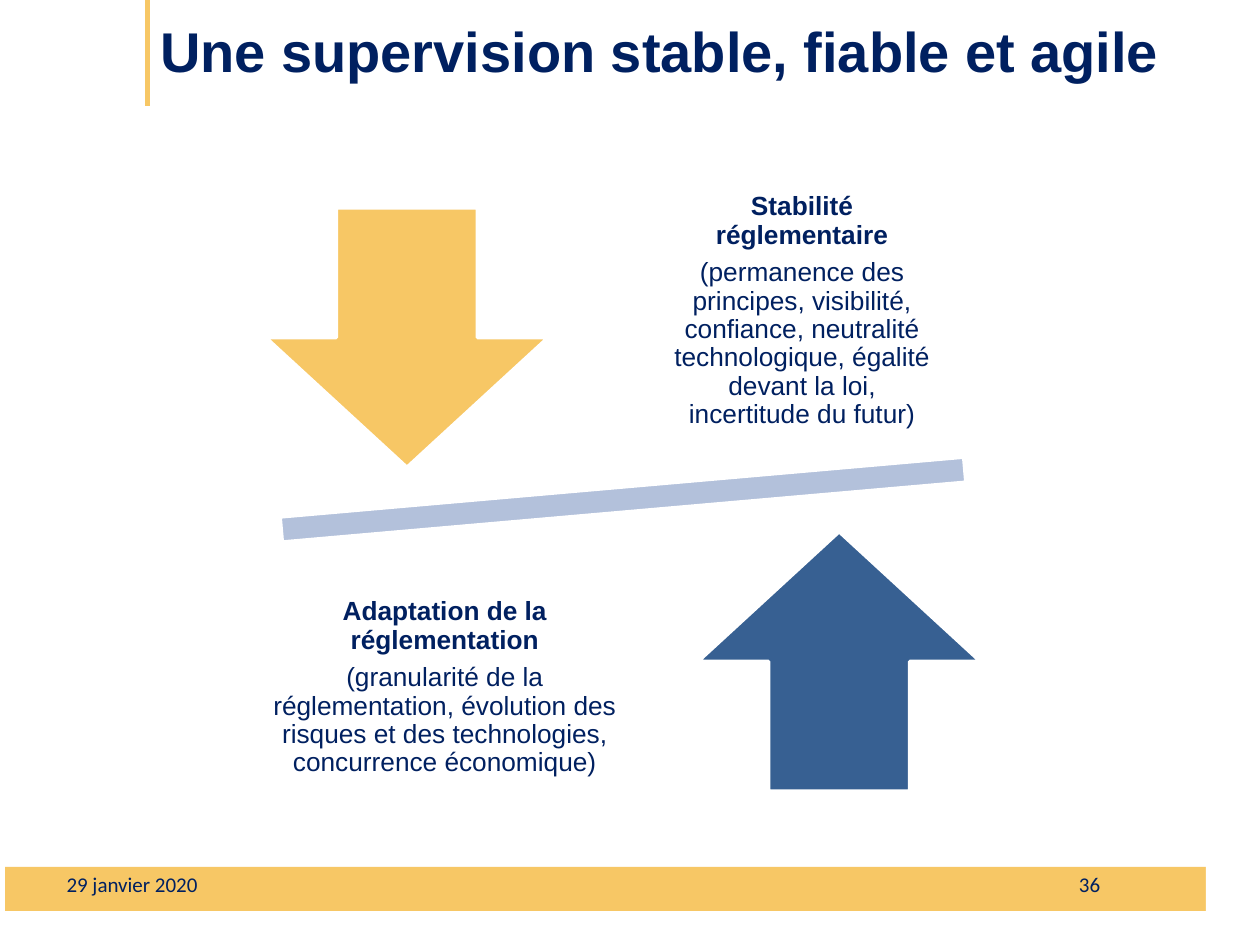
import pptx
import pptx.util
import pptx.dml.color
import pptx.enum.shapes
import pptx.enum.text
import pptx.oxml
from dataclasses import dataclass

Inches = pptx.util.Inches
Pt = pptx.util.Pt
Shapes = pptx.enum.shapes.MSO_SHAPE
Align = pptx.enum.text.PP_ALIGN
Anchor = pptx.enum.text.MSO_ANCHOR


def rgb(value):
    return pptx.dml.color.RGBColor.from_string(value)


@dataclass(frozen=True)
class Theme:
    navy: str = "002060"
    yellow: str = "F7C765"
    blue: str = "376092"
    pale_blue: str = "B3C1DB"
    white: str = "FFFFFF"
    title_size: float = 32
    body_size: float = 15
    footer_size: float = 12
    main_font: str = "Arial"
    footer_font: str = "Calibri"


class SlideBuilder:
    def __init__(self, slide, theme):
        self.slide = slide
        self.theme = theme

    def format_text(self, paragraph, font, **layout):
        for name, value in layout.items():
            setattr(paragraph, name, value)
        for name, value in font.items():
            setattr(paragraph.font, name, value)
        paragraph.font.color.rgb = rgb(self.theme.navy)

    def format_frame(self, frame, inset=None):
        frame.word_wrap = True
        frame.vertical_anchor = Anchor.MIDDLE
        if inset is not None:
            for side in ("left", "right", "top", "bottom"):
                setattr(frame, f"margin_{side}", Inches(inset))

    def title(self, text, left, top, width, height):
        shape = self.slide.shapes.title
        position = {"left": left, "top": top, "width": width, "height": height}
        for name, value in position.items():
            setattr(shape, name, Inches(value))
        self.format_frame(shape.text_frame)
        shape.text_frame.text = text
        font = {"name": self.theme.main_font, "size": Pt(self.theme.title_size), "bold": True}
        self.format_text(shape.text_frame.paragraphs[0], font, alignment=Align.LEFT)

    def shape(self, kind, fill, left, top, width, height, outline=None, rotation=0):
        shape = self.slide.shapes.add_shape(kind, *map(Inches, (left, top, width, height)))
        shape.shadow.inherit = False
        shape.rotation = rotation
        shape.fill.solid()
        shape.fill.fore_color.rgb = rgb(fill)
        if outline:
            shape.line.color.rgb = rgb(outline)
            shape.line.width = Pt(2)
        else:
            shape.line.fill.background()

    def line(self, color, weight, *ends):
        connector = self.slide.shapes.add_connector(
            pptx.enum.shapes.MSO_CONNECTOR.STRAIGHT, *map(Inches, ends))
        connector.line.color.rgb = rgb(color)
        connector.line.width = Pt(weight)
        properties = connector._element.spPr
        properties.append(pptx.oxml.parse_xml(
            '<a:effectLst xmlns:a="http://schemas.openxmlformats.org/drawingml/2006/main"/>'))

    def text_box(self, left, top, width, height, inset=None):
        box = self.slide.shapes.add_textbox(*map(Inches, (left, top, width, height)))
        self.format_frame(box.text_frame, inset)
        return box.text_frame

    def footer(self, text, left, alignment):
        paragraph = self.text_box(left, 6.82, 2.33, 0.4).paragraphs[0]
        paragraph.text = text
        font = {"name": self.theme.footer_font, "size": Pt(self.theme.footer_size)}
        self.format_text(paragraph, font, alignment=alignment)

    def argument(self, heading, detail, left, top, width, height):
        frame = self.text_box(left, top, width, height, inset=0.12)
        frame.text = f"{heading}\n{detail}"
        for paragraph, bold in zip(frame.paragraphs, (True, False)):
            font = {"name": self.theme.main_font, "size": Pt(self.theme.body_size), "bold": bold}
            self.format_text(paragraph, font, alignment=Align.CENTER,
                             line_spacing=0.9, space_after=Pt(5.25))


def main():
    presentation = pptx.Presentation()
    presentation.slide_width = Inches(10)
    presentation.slide_height = Inches(7.5)
    theme = Theme()
    slide = presentation.slides.add_slide(presentation.slide_layouts[5])
    builder = SlideBuilder(slide, theme)

    # Title and its accent line
    builder.line(theme.yellow, 2.75, 1.17, 0, 1.17, 0.84)
    builder.title("Une supervision stable, fiable et agile", 1.17, -0.03, 8.63, 0.86)

    # Footer band, cut off at its right end
    builder.shape(Shapes.RECTANGLE, theme.yellow, 0.04, 6.88, 9.76, 0.35)
    builder.shape(Shapes.RECTANGLE, theme.white, 9.57, 6.74, 0.28, 0.66)
    builder.footer("36", 6.5, Align.RIGHT)
    builder.footer("29 janvier 2020", 0.43, Align.LEFT)

    # Tilted balance bar with opposing arrows
    builder.shape(Shapes.MATH_MINUS, theme.pale_blue, 1.24, 3.54, 7.41, 0.85,
                  outline=theme.white, rotation=355)
    builder.shape(Shapes.DOWN_ARROW, theme.yellow, 2.11, 1.65, 2.24, 2.06, outline=theme.white)
    builder.shape(Shapes.UP_ARROW, theme.blue, 5.54, 4.22, 2.24, 2.06, outline=theme.white)

    # Arguments on each side of the balance
    builder.argument(
        "Stabilité réglementaire",
        "(permanence des principes, visibilité, confiance, neutralité technologique, "
        "égalité devant la loi, incertitude du futur)",
        5.17, 1.39, 2.39, 2.16)
    builder.argument(
        "Adaptation de la réglementation",
        "(granularité de la réglementation, évolution des risques et des technologies, "
        "concurrence économique)",
        2.01, 4.38, 3.04, 2.16)

    presentation.save("out.pptx")


if __name__ == "__main__":
    main()
